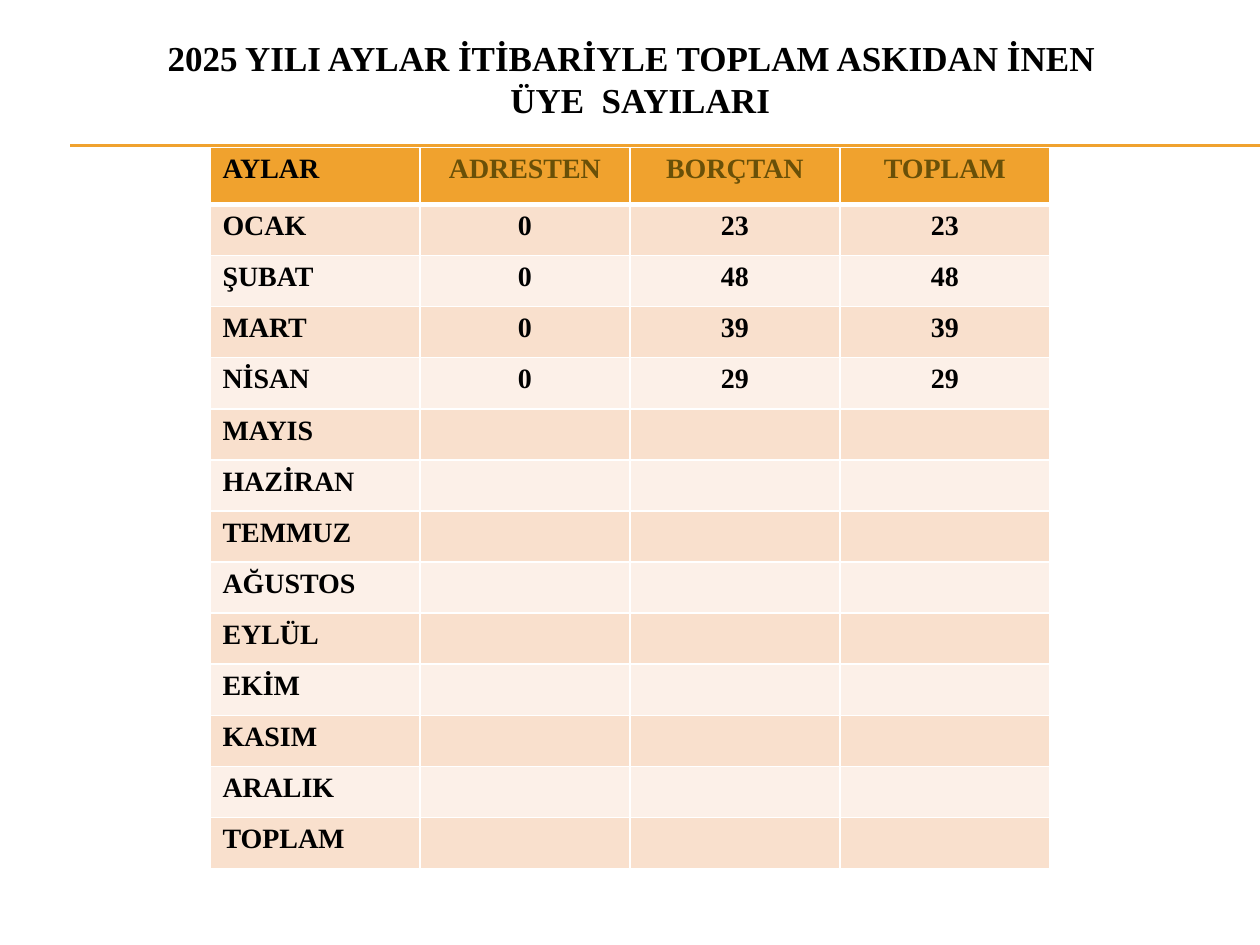
from lxml import etree
from pptx import Presentation, util as u
from pptx.dml.color import RGBColor
from pptx.enum import shapes, text
from pptx.oxml import ns

Pt = u.Pt


def style_text(tf, size, color, align):
    for p in tf.paragraphs:
        p.alignment = align
        for r in p.runs:
            r.font.name = "Times New Roman"
            r.font.size = Pt(size)
            r.font.bold = True
            r.font.color.rgb = RGBColor.from_string(color)


def add_border(cell, side, width):
    ln = etree.SubElement(cell._tc.get_or_add_tcPr(), ns.qn(f"a:ln{side}"), w=str(Pt(width)))
    fill = etree.SubElement(ln, ns.qn("a:solidFill"))
    etree.SubElement(fill, ns.qn("a:srgbClr"), val="FFFFFF")


prs = Presentation()
prs.slide_width, prs.slide_height = Pt(720), Pt(540)
s = prs.slides.add_slide(prs.slide_layouts[5])

for y in (82.8, 83.5):
    line = s.shapes.add_connector(shapes.MSO_CONNECTOR.STRAIGHT, Pt(40.3), Pt(y), Pt(720), Pt(y))
    line.line.color.rgb = RGBColor.from_string("F0A22E")
    line.line.width = Pt(0.75)
    etree.SubElement(line._element.spPr, ns.qn("a:effectLst"))

header = ["AYLAR", "ADRESTEN", "BORÇTAN", "TOPLAM"]
months = ["OCAK", "ŞUBAT", "MART", "NİSAN", "MAYIS", "HAZİRAN", "TEMMUZ",
          "AĞUSTOS", "EYLÜL", "EKİM", "KASIM", "ARALIK"]
from_debt = [23, 48, 39, 29]
rows = [header]
for i, month in enumerate(months + ["TOPLAM"]):
    counts = [0, from_debt[i], from_debt[i]] if i < len(from_debt) else ["", "", ""]
    rows.append([month] + counts)

header_h, row_h = 32.4, 29.2
table_h = header_h + row_h * (len(rows) - 1)
table = s.shapes.add_table(len(rows), 4, Pt(120), Pt(84.4), Pt(480), Pt(table_h)).table
for col in table.columns:
    col.width = Pt(120)

for i, values in enumerate(rows):
    table.rows[i].height = Pt(row_h if i else header_h)
    band = "F9E0CD" if i % 2 else "FCF0E8"
    for j, value in enumerate(values):
        cell = table.cell(i, j)
        for side in "LRTB":
            header_edge = (i, side) in ((0, "B"), (1, "T"))
            add_border(cell, side, 3 if header_edge else 1)
        cell.fill.solid()
        cell.fill.fore_color.rgb = RGBColor.from_string(band if i else "F0A22E")
        cell.text_frame.text = str(value)
        color = "695008" if i == 0 and j else "000000"
        style_text(cell.text_frame, 16, color, text.PP_ALIGN.CENTER if j else text.PP_ALIGN.LEFT)

title = s.shapes.title
title.left, title.top, title.width, title.height = Pt(23.8), Pt(11.5), Pt(684), Pt(66.2)
tf = title.text_frame
tf.text = "2025 YILI AYLAR İTİBARİYLE TOPLAM ASKIDAN İNEN  \vÜYE  SAYILARI"
tf.word_wrap = True
tf.auto_size = text.MSO_AUTO_SIZE.NONE
tf.vertical_anchor = text.MSO_ANCHOR.MIDDLE
style_text(tf, 20, "000000", text.PP_ALIGN.CENTER)

prs.save("out.pptx")
